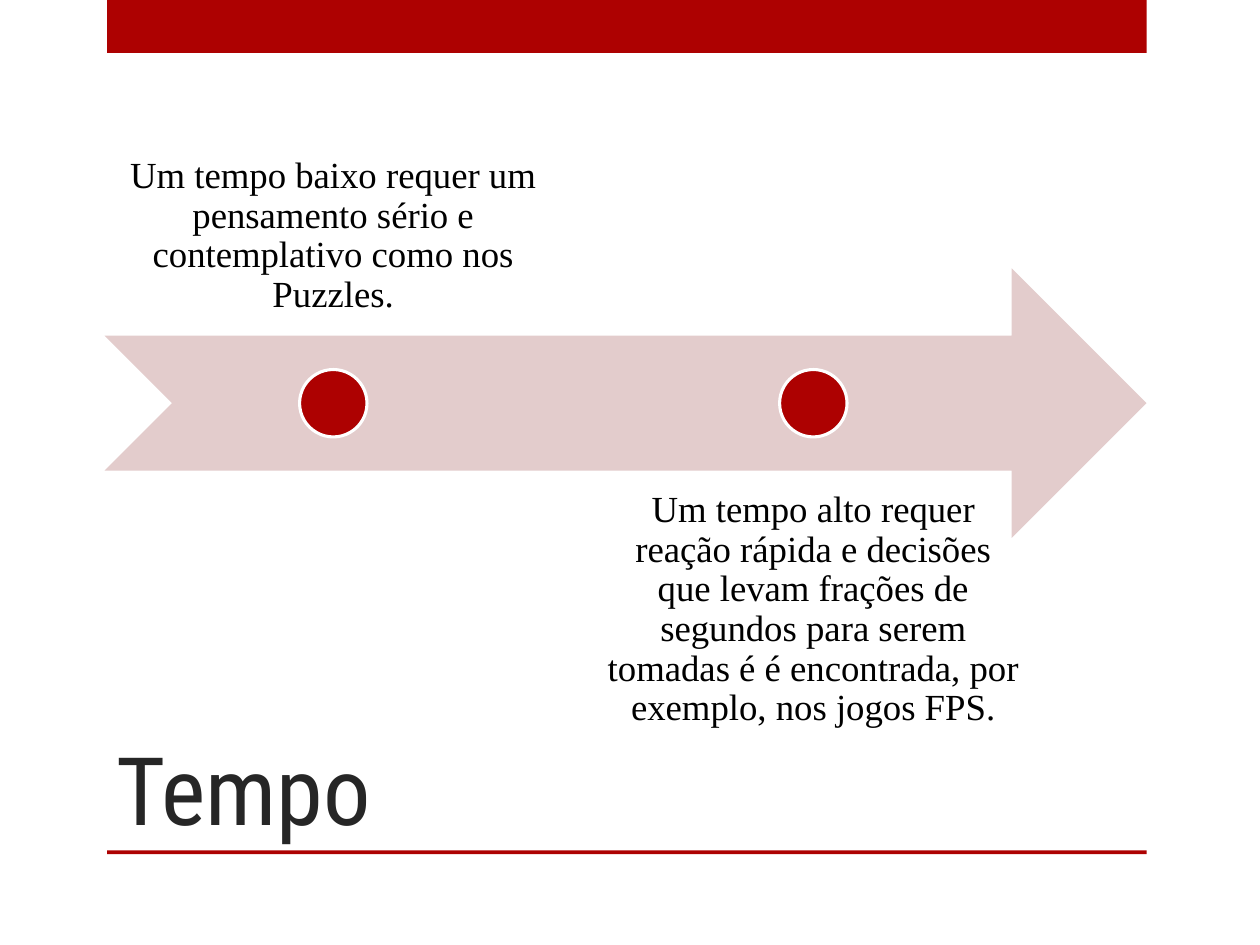
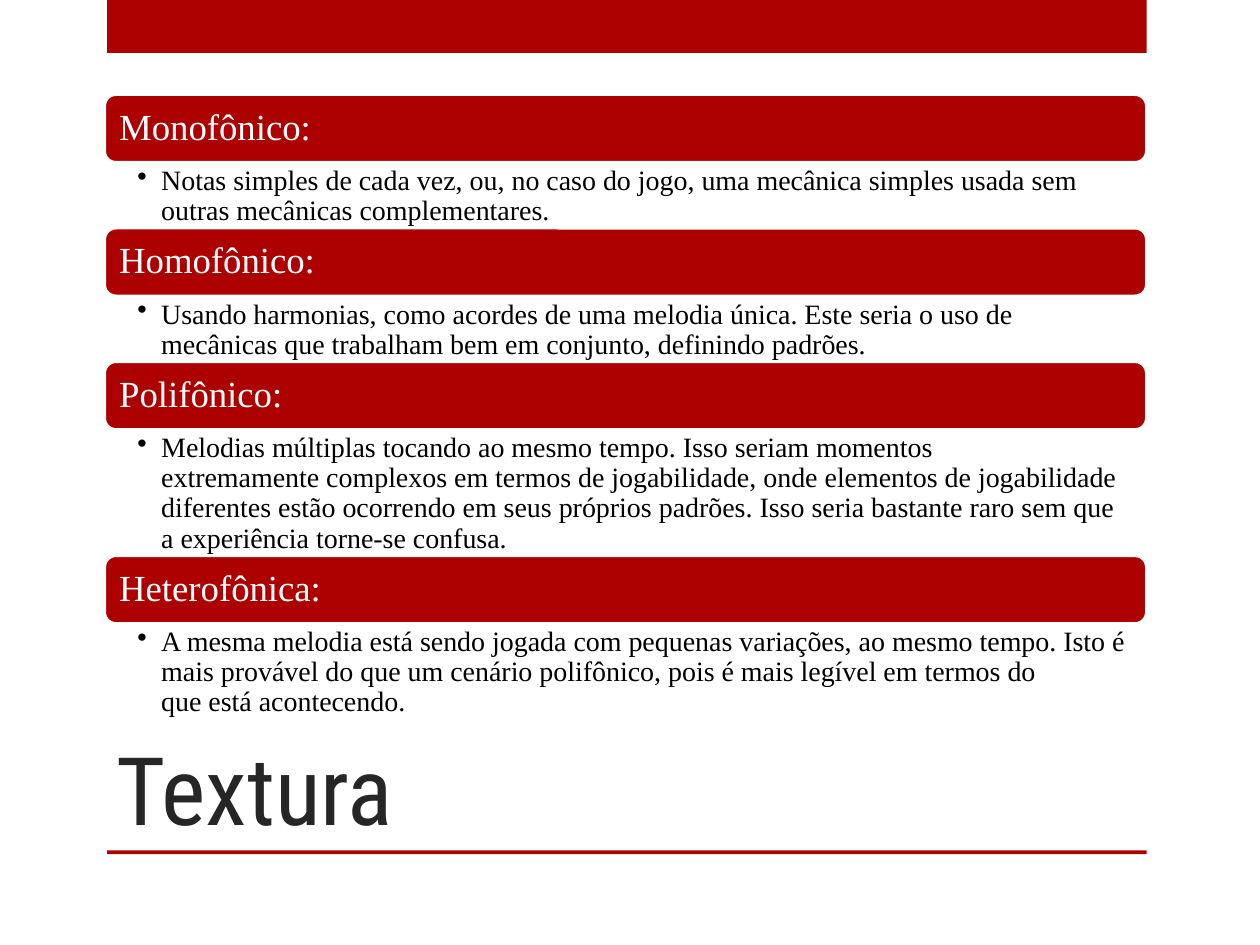
from pptx import Presentation
from pptx.dml.color import RGBColor
from pptx.enum.shapes import MSO_SHAPE as Shape
from pptx.enum.text import MSO_ANCHOR as Anchor, PP_ALIGN as Align
from pptx.util import Inches, Pt
from lxml.etree import SubElement
from pptx.oxml.ns import qn

RED = RGBColor(0xAD, 0x01, 0x01)
PINK = RGBColor(0xE3, 0xCC, 0xCC)
WHITE = RGBColor(0xFF, 0xFF, 0xFF)
BLACK = RGBColor(0x00, 0x00, 0x00)
GREY = RGBColor(0x26, 0x26, 0x26)
SERIF, SANS = "Times New Roman", "Roboto Condensed"

# "~" stands for a space that does not break the line
SPEEDS = [
    "Um tempo baixo requer um pensamento sério e contemplativo como nos Puzzles.",
    "Um tempo alto requer reação rápida e decisões que levam frações de segundos "
    "para serem tomadas é é encontrada, por exemplo, nos jogos FPS.",
]
# heading, explanation, lines it takes
TEXTURES = [
    ("Monofônico:",
     "Notas simples~de cada vez,~ou, no caso~do jogo, uma mecânica~simples "
     "usada~sem outras mecânicas complementares.", 2),
    ("Homofônico:",
     "Usando~harmonias, como~acordes de~uma melodia~única.~Este~seria o uso~de "
     "mecânicas~que trabalham~bem em conjunto, definindo padrões.", 2),
    ("Polifônico:",
     "Melodias~múltiplas~tocando~ao mesmo tempo.~Isso seriam~momentos "
     "extremamente~complexos em~termos de jogabilidade, onde~elementos de "
     "jogabilidade diferentes~estão ocorrendo em~seus próprios padrões.~Isso "
     "seria~bastante raro~sem que a experiência torne-se confusa.", 4),
    ("Heterofônica:",
     "A mesma melodia~está sendo jogada~com pequenas variações, ao mesmo "
     "tempo.~Isto é mais~provável do que um cenário~polifônico, pois é~mais "
     "legível~em termos do que~está acontecendo.", 3),
]

LEFT, WIDE = 0.83, 8.27          # content column
BAND_X, BAND_W = 0.85, 8.25      # bands at top and bottom
ARROW_Y, ARROW_H = 2.13, 2.14
COL_W, COL_STEP = 3.63, 3.81
LIST_Y, HEAD_H, LINE_H, PAD = 0.75, 0.54, 0.24, 0.04


def draw(slide, kind, box, fill, line=None):
    shape = slide.shapes.add_shape(kind, *map(Inches, box))
    shape.shadow.inherit = False
    shape.fill.solid()
    shape.fill.fore_color.rgb = fill
    if line is None:
        shape.line.fill.background()
    else:
        shape.line.color.rgb = line
        shape.line.width = Pt(1.75)
    return shape


def write(shape, text, size=21, font=SERIF, color=BLACK, align=Align.LEFT,
          anchor=Anchor.TOP, inset=(0.1, 0.05, 0.1, 0.05), space=0.9, bullet=False):
    """Set the text of a shape; inset runs left, top, right, bottom."""
    frame = shape.text_frame
    frame.word_wrap = True
    frame.vertical_anchor = anchor
    (frame.margin_left, frame.margin_top,
     frame.margin_right, frame.margin_bottom) = map(Inches, inset)
    para = frame.paragraphs[0]
    para.alignment = align
    para.line_spacing = space
    run = para.add_run()
    run.text = text.replace("~", chr(160))
    run.font.size = Pt(size)
    run.font.name = font
    run.font.color.rgb = color
    if bullet:
        props = para._p.get_or_add_pPr()
        props.set("marL", str(Inches(0.19)))
        props.set("indent", str(-Inches(0.19)))
        SubElement(props, qn("a:buChar")).set("char", "•")


def label(slide, box, text, **style):
    write(slide.shapes.add_textbox(*map(Inches, box)), text, **style)


def start(deck, title):
    """Add a slide with its bands and title."""
    slide = deck.slides.add_slide(deck.slide_layouts[6])
    for top, high in ((0, 0.42), (6.75, 0.03)):
        draw(slide, Shape.RECTANGLE, (BAND_X, top, BAND_W, high), RED)
    label(slide, (LEFT, 5, 7.42, 1.75), title, size=54, font=SANS,
          color=GREY, anchor=Anchor.BOTTOM, space=1.0)
    return slide


def tempo(deck):
    slide = start(deck, "Tempo")
    draw(slide, Shape.NOTCHED_RIGHT_ARROW, (LEFT, ARROW_Y, WIDE, ARROW_H), PINK)
    dot = ARROW_H / 4
    mid = ARROW_Y + ARROW_H / 2
    places = ((mid - ARROW_H * 1.25, Anchor.BOTTOM), (mid + ARROW_H / 4, Anchor.TOP))
    for col, (text, (top, anchor)) in enumerate(zip(SPEEDS, places)):
        x = LEFT + col * COL_STEP
        label(slide, (x, top, COL_W, ARROW_H), text, align=Align.CENTER,
              anchor=anchor, inset=(0.16,) * 4)
        draw(slide, Shape.OVAL, (x + (COL_W - dot) / 2, mid - dot / 2, dot, dot),
             RED, WHITE)


def texture(deck):
    slide = start(deck, "Textura")
    y = LIST_Y
    for head, text, lines in TEXTURES:
        bar = draw(slide, Shape.ROUNDED_RECTANGLE, (LEFT, y, WIDE, HEAD_H), RED, WHITE)
        write(bar, head, color=WHITE, anchor=Anchor.MIDDLE, inset=(0.09,) * 4)
        y += HEAD_H
        high = lines * LINE_H + PAD
        label(slide, (LEFT, y, WIDE, high), text, size=16,
              inset=(0.26, 0.03, 0.16, 0.03), bullet=True)
        y += high


def main():
    deck = Presentation()
    deck.slide_width, deck.slide_height = Inches(10), Inches(7.5)
    tempo(deck)
    texture(deck)
    deck.save("out.pptx")


if __name__ == "__main__":
    main()
